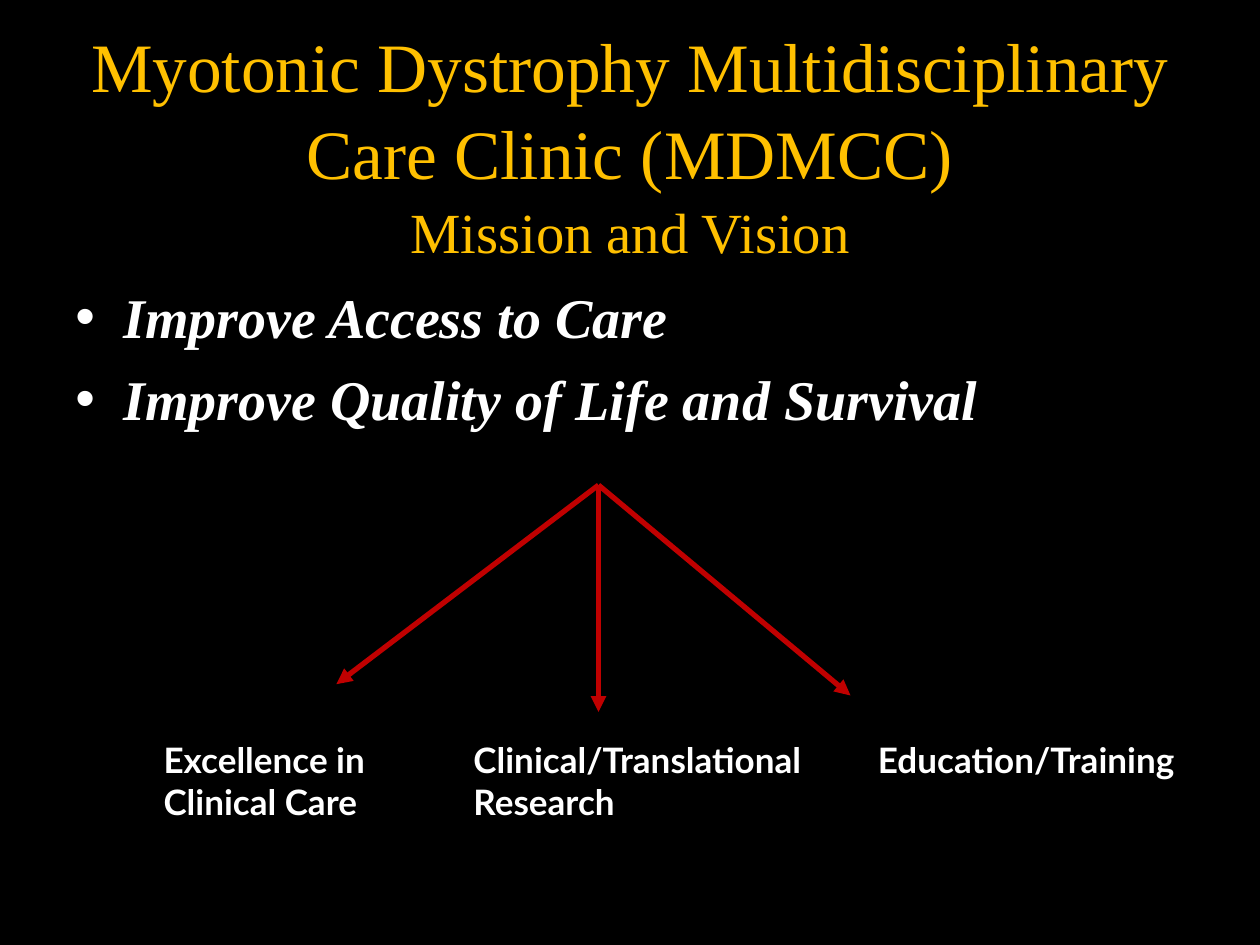
from dataclasses import dataclass

from lxml.etree import SubElement
from pptx import Presentation
from pptx.dml.color import RGBColor
from pptx.enum.shapes import MSO_CONNECTOR
from pptx.enum.text import MSO_ANCHOR, PP_ALIGN
from pptx.oxml.ns import qn
from pptx.util import Inches, Pt


@dataclass(frozen=True)
class Theme:
    """Colours, fonts and type sizes of the slide."""
    background: RGBColor = RGBColor(0, 0, 0)
    title: RGBColor = RGBColor(0xFF, 0xC0, 0)
    text: RGBColor = RGBColor(0xFF, 0xFF, 0xFF)
    arrow: RGBColor = RGBColor(0xC0, 0, 0)
    serif: str = "Times New Roman"
    sans: str = "Lato"
    title_size: float = 39.6
    subtitle_size: float = 32.4
    bullet_size: float = 32
    label_size: float = 20
    arrow_width: float = 3
    serif_spacing: float = 1.05


THEME = Theme()


def add_text(s, box, lines, sizes, color, font, bold=False, italic=False,
             align=PP_ALIGN.LEFT, anchor=MSO_ANCHOR.TOP, wrap=True,
             spacing=None, before=0):
    """Add a text box with one paragraph per line and return its paragraphs."""
    tf = s.shapes.add_textbox(*map(Inches, box)).text_frame
    tf.word_wrap = wrap
    tf.vertical_anchor = anchor
    for i, (line, size) in enumerate(zip(lines, sizes)):
        p = tf.add_paragraph() if i else tf.paragraphs[0]
        p.alignment = align
        p.line_spacing = spacing
        p.space_before = Pt(before if i else 0)
        r = p.add_run()
        r.text = line
        r.font.name, r.font.size = font, Pt(size)
        r.font.bold, r.font.italic = bold, italic
        r.font.color.rgb = color
    return tf.paragraphs


def add_bullet(p, indent):
    """Give a paragraph a round bullet with a hanging indent."""
    pPr = p._p.get_or_add_pPr()
    pPr.set("marL", str(Inches(indent)))
    pPr.set("indent", str(-Inches(indent)))
    SubElement(pPr, qn("a:buFont")).set("typeface", "Arial")
    SubElement(pPr, qn("a:buChar")).set("char", "•")


def add_arrow(s, start, end):
    """Draw a straight arrow from start to end."""
    line = s.shapes.add_connector(
        MSO_CONNECTOR.STRAIGHT, *map(Inches, (*start, *end)))
    line.line.color.rgb = THEME.arrow
    line.line.width = Pt(THEME.arrow_width)
    SubElement(line.line._get_or_add_ln(), qn("a:tailEnd")).set("type", "triangle")
    SubElement(line._element.spPr, qn("a:effectLst"))


def add_title(s, box):
    """Place the clinic name and its subtitle, centred in the box."""
    lines = ["Myotonic Dystrophy Multidisciplinary Care Clinic (MDMCC)",
             "Mission and Vision"]
    add_text(s, box, lines, [THEME.title_size, THEME.subtitle_size],
             THEME.title, THEME.serif, align=PP_ALIGN.CENTER,
             anchor=MSO_ANCHOR.MIDDLE, spacing=THEME.serif_spacing)


def add_goals(s, box):
    """Place the bulleted goals."""
    lines = ["Improve Access to Care", "Improve Quality of Life and Survival"]
    size = THEME.bullet_size
    for p in add_text(s, box, lines, [size] * len(lines), THEME.text,
                      THEME.serif, bold=True, italic=True,
                      spacing=THEME.serif_spacing, before=0.2 * size):
        add_bullet(p, 0.38)


def add_pillars(s, box):
    """Place the arrows that fan out to the three labelled pillars."""
    left, top, width, height = box
    label_top = top + 1.96
    origin = (left + 3.55, top)
    pillars = [
        (["Excellence in", "Clinical Care"], 0, 1.84, (1.47, 1.58)),
        (["Clinical/Translational", "Research"], 2.46, 2.83, (3.55, 1.8)),
        (["Education/Training"], 5.67, 2.56, (5.55, 1.67)),
    ]
    for lines, x, label_width, (tip_x, tip_y) in pillars:
        add_arrow(s, origin, (left + tip_x, top + tip_y))
        label_height = 0.1 + len(lines) * THEME.label_size * 1.2 / 72
        add_text(s, (left + x, label_top, label_width, label_height), lines,
                 [THEME.label_size] * len(lines), THEME.text, THEME.sans,
                 bold=True, wrap=False)


def main():
    """Build and save the slide."""
    prs = Presentation()
    prs.slide_width, prs.slide_height = Inches(10), Inches(7.5)
    s = prs.slides.add_slide(prs.slide_layouts[6])
    s.background.fill.solid()
    s.background.fill.fore_color.rgb = THEME.background
    add_title(s, (0.5, 0.5, 9, 1.25))
    add_goals(s, (0.5, 2.17, 9, 1.83))
    add_pillars(s, (1.2, 3.85, 8.23, 2.73))
    prs.save("out.pptx")


if __name__ == "__main__":
    main()
